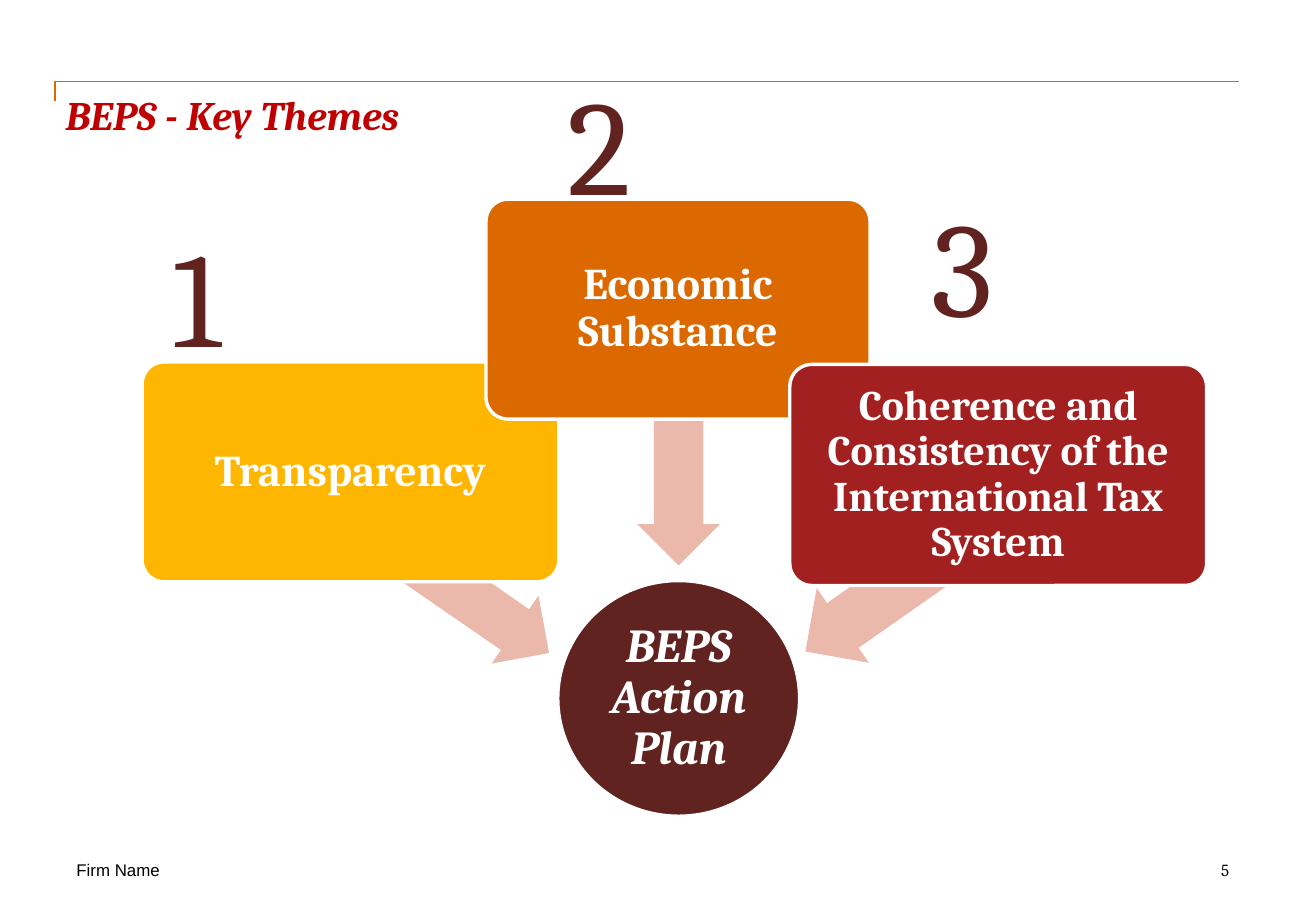
import pptx
import pptx.util
import pptx.dml.color
import pptx.enum.shapes
import pptx.enum.text

PX = 9144
SHAPE = pptx.enum.shapes.MSO_SHAPE
ALIGN = pptx.enum.text.PP_ALIGN
ANCHOR = pptx.enum.text.MSO_ANCHOR
COLORS = {
    "black": "000000", "white": "FFFFFF", "title": "C00000",
    "brown": "602320", "yellow": "FFB600", "orange": "DC6900",
    "red": "A32020", "arrow": "EBB9AB",
}


def px(*lengths):
    return [pptx.util.Emu(n * PX) for n in lengths]


def rgb(name):
    return pptx.dml.color.RGBColor.from_string(COLORS[name])


def write(sp, text, size, color, font="Cambria", bold=False, italic=False,
          align=ALIGN.LEFT, anchor=ANCHOR.TOP, inset=0, spacing=1.0):
    tf = sp.text_frame
    tf.text = text
    tf.word_wrap = True
    tf.auto_size = pptx.enum.text.MSO_AUTO_SIZE.NONE
    tf.vertical_anchor = anchor
    tf.margin_left, tf.margin_top, tf.margin_right, tf.margin_bottom = px(*[inset] * 4)
    p = tf.paragraphs[0]
    p.alignment = align
    p.line_spacing = spacing
    r = p.runs[0]
    r.font.name = font
    r.font.size = pptx.util.Pt(size)
    r.font.bold = bold
    r.font.italic = italic
    r.font.color.rgb = rgb(color)


def add_label(s, box, text, size, color, font="Cambria"):
    write(s.shapes.add_textbox(*px(*box)), text, size, color, font)


def add_title(s, text):
    sp = s.shapes.title
    sp.left, sp.top, sp.width, sp.height = px(54, 74, 957, 100)
    write(sp, text, 24, "title", bold=True, italic=True)


def add_filled(s, kind, box, color, adjustments=()):
    sp = s.shapes.add_shape(kind, *px(*box))
    sp.shadow.inherit = False
    sp.fill.solid()
    sp.fill.fore_color.rgb = rgb(color)
    sp.line.fill.background()
    for i, value in enumerate(adjustments):
        sp.adjustments[i] = value
    return sp


def add_node(s, kind, box, color, text, size, inset, adjustments=(), italic=False):
    sp = add_filled(s, kind, box, color, adjustments)
    sp.line.color.rgb = rgb("white")
    sp.line.width = pptx.util.Pt(2)
    write(sp, text, size, "white", bold=True, italic=italic, align=ALIGN.CENTER,
          anchor=ANCHOR.MIDDLE, inset=inset, spacing=0.9)


def add_arrow(s, box, rotation):
    sp = add_filled(s, SHAPE.LEFT_ARROW, box, "arrow", (0.6, 0.5))
    sp.rotation = rotation


def add_header_rule(s):
    builder = s.shapes.build_freeform(45, 83, scale=PX)
    builder.add_line_segments([(45, 67), (1020, 67)], close=False)
    sp = builder.convert_to_shape()
    sp.shadow.inherit = False
    sp.fill.background()
    sp.line.color.rgb = rgb("orange")
    sp.line.width = pptx.util.Pt(1)


def main():
    prs = pptx.Presentation()
    prs.slide_width, prs.slide_height = px(1083, 750)
    s = prs.slides.add_slide(prs.slide_layouts[5])

    add_header_rule(s)
    add_label(s, (63, 708, 307, 17), "Firm Name", 10, "black", "Arial")
    add_label(s, (1005, 708, 44, 33), "5", 10, "black")

    add_node(s, SHAPE.OVAL, (459, 478, 199, 194), "brown",
             "BEPS Action Plan", 28, 2, italic=True)
    themes = [
        ((254, 442, 217, 68), 214.6, (117, 298, 343, 181), "yellow",
         "Transparency", 26),
        ((453, 326, 211, 68), 270, (400, 164, 316, 181), "orange",
         "Economic Substance", 26),
        ((644, 439, 209, 75), 325, (650, 300, 343, 182), "red",
         "Coherence and Consistency of the International Tax System", 25),
    ]
    for arrow, rotation, box, color, text, size in themes:
        add_arrow(s, arrow, rotation)
        add_node(s, SHAPE.ROUNDED_RECTANGLE, box, color, text, size, 5, (0.1,))

    for number, left, top in (("1", 142, 175), ("2", 467, 50), ("3", 767, 150)):
        add_label(s, (left, top, 133, 100), number, 80, "brown")
    add_title(s, "BEPS - Key Themes")

    prs.save("out.pptx")


if __name__ == "__main__":
    main()
